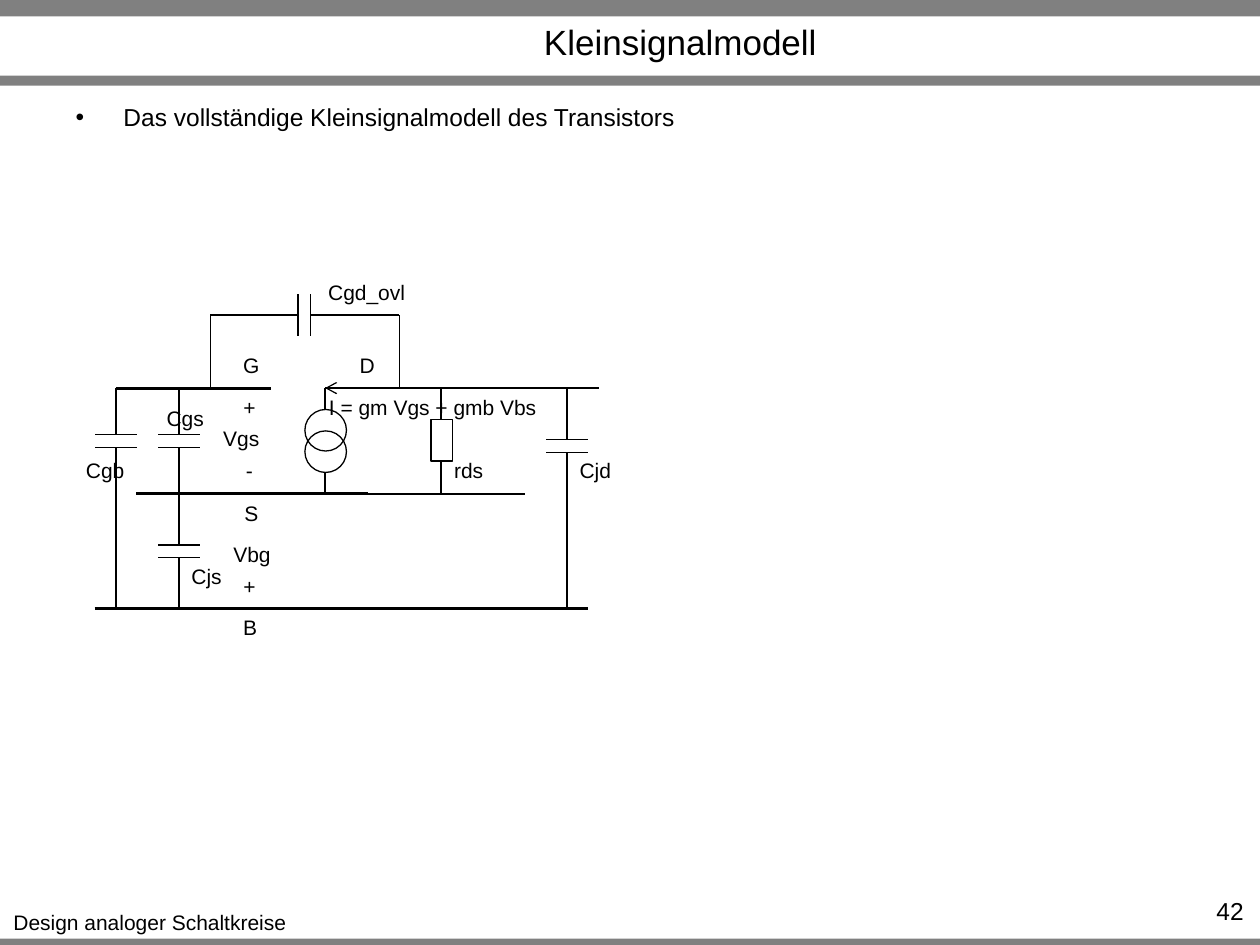
from lxml import etree
from pptx import Presentation
from pptx.dml.color import RGBColor
from pptx.enum.shapes import MSO_CONNECTOR as Connector, MSO_SHAPE as Shape
from pptx.enum.text import MSO_ANCHOR as Anchor, MSO_AUTO_SIZE as AutoSize, PP_ALIGN as Align
from pptx.oxml.ns import qn
from pptx.util import Inches, Pt

COLORS = {"ink": "000000", "bar": "808080"}
FONT = "Arial"
TITLE = "Kleinsignalmodell"
BULLET = "Das vollständige Kleinsignalmodell des Transistors"
FOOTER = "Design analoger Schaltkreise"
PAGE = "42"

BARS = [(7.45, 0.08), (0, 0.13), (0.6, 0.08)]  # top, height

# Circuit levels
FEEDBACK, GATE, SOURCE, BULK = 2.5, 3.08, 3.92, 4.83
THIN, THICK = 0.75, 1.75
PLATE, GAP = 0.33, 0.1

RAILS = [  # x from, x to, y, width
    (0.92, 2.15, GATE, THICK),
    (2.58, 3, GATE, THIN),
    (2.58, 4.17, SOURCE, THIN),
    (1.08, 2.92, SOURCE, THICK),
    (0.75, 4.67, BULK, THICK),
    (3.17, 2.83, FEEDBACK, THIN),
    (2, 1.67, FEEDBACK, THIN),
]
DROPS = [  # x, y from, y to
    (2.58, 3.75, SOURCE), (2.58, GATE, 3.25),
    (3.5, GATE, 3.33), (3.5, 3.67, SOURCE),
    (0.92, SOURCE, BULK), (4.5, 4, BULK),
    (3.17, FEEDBACK, GATE), (1.67, FEEDBACK, GATE),
]
CAPACITORS = [  # x, y from, y to
    (1.42, GATE, SOURCE), (0.92, GATE, SOURCE),
    (4.5, GATE, 4), (1.42, SOURCE, BULK),
]
OUTLINES = [  # current source and resistor
    (Shape.OVAL, 2.42, 3.25, 0.33, 0.33),
    (Shape.OVAL, 2.42, 3.42, 0.33, 0.33),
    (Shape.RECTANGLE, 3.42, 3.33, 0.17, 0.33),
]
LABELS = [  # text, left, top, width
    ("Vgs", 1.67, 3.33, 0.49), ("I = gm Vgs + gmb Vbs", 2.5, 3.08, 1.87),
    ("+", 1.83, 3.08, 0.3), ("-", 1.85, 3.58, 0.26),
    ("G", 1.83, 2.75, 0.33), ("S", 1.84, 3.92, 0.31),
    ("B", 1.83, 4.83, 0.31), ("Vbg", 1.75, 4.25, 0.5),
    ("D", 2.75, 2.75, 0.33), ("+", 1.83, 4.5, 0.3),
    ("rds", 3.5, 3.58, 0.44), ("Cjd", 4.5, 3.58, 0.45),
    ("Cjs", 1.42, 4.42, 0.44), ("Cgs", 1.22, 3.17, 0.5),
    ("Cgb", 0.58, 3.58, 0.51), ("Cgd_ovl", 2.5, 2.17, 0.82),
]


def color(name):
    return RGBColor.from_string(COLORS[name])


def write(shape, text, size, align, wrap=True):
    frame = shape.text_frame
    frame.word_wrap = wrap
    paragraph = frame.paragraphs[0]
    paragraph.alignment = align
    run = paragraph.add_run()
    run.text = text
    run.font.size, run.font.name = Pt(size), FONT
    run.font.color.rgb = color("ink")
    return paragraph


def place(shape, left, top, width, height):
    shape.left, shape.top = Inches(left), Inches(top)
    shape.width, shape.height = Inches(width), Inches(height)


def add_text(shapes, text, box, size, align, wrap=False):
    shape = shapes.add_textbox(*map(Inches, box))
    write(shape, text, size, align, wrap)


def add_line(shapes, x1, y1, x2, y2, width=THIN):
    line = shapes.add_connector(Connector.STRAIGHT, *map(Inches, (x1, y1, x2, y2)))
    line.line.color.rgb = color("ink")
    line.line.width = Pt(width)
    etree.SubElement(line._element.spPr, qn("a:effectLst"))
    return line


def add_capacitor(shapes, x1, y1, x2, y2):
    """Two plates across the middle of a wire, with a lead to each end."""
    group = shapes.add_group_shape().shapes
    x, y = (x1 + x2) / 2, (y1 + y2) / 2
    half, reach = GAP / 2, PLATE / 2
    if x1 == x2:
        add_line(group, x, y1, x, y - half)
        for plate in (y - half, y + half):
            add_line(group, x - reach, plate, x + reach, plate)
        add_line(group, x, y + half, x, y2)
    else:
        add_line(group, x1, y, x - half, y)
        for plate in (x - half, x + half):
            add_line(group, plate, y + reach, plate, y - reach)
        add_line(group, x + half, y, x2, y)


def main():
    presentation = Presentation()
    presentation.slide_width, presentation.slide_height = Inches(10), Inches(7.5)
    slide = presentation.slides.add_slide(presentation.slide_layouts[1])
    shapes = slide.shapes

    # Frame bars and footer
    for top, height in BARS:
        bar = shapes.add_shape(Shape.RECTANGLE, 0, Inches(top), Inches(10), Inches(height))
        bar.shadow.inherit = False
        bar.fill.solid()
        bar.fill.fore_color.rgb = color("bar")
        bar.line.fill.background()
    add_text(shapes, FOOTER, (0, 7.17, 2.38, 0.3), 12, Align.CENTER)
    add_text(shapes, PAGE, (9.1, 7.06, 0.87, 0.24), 14, Align.RIGHT, wrap=True)

    # Title and bullet
    title, body = shapes.title, slide.placeholders[1]
    place(title, 1.3, 0.14, 8.2, 0.38)
    write(title, TITLE, 20, Align.CENTER)
    title.text_frame.vertical_anchor = Anchor.MIDDLE
    place(body, 0.5, 0.76, 9, 0.49)
    paragraph = write(body, BULLET, 14, Align.LEFT)
    paragraph.space_before = Pt(0)
    properties = paragraph._p.get_or_add_pPr()
    properties.set("marL", str(Inches(0.38)))
    properties.set("indent", str(-Inches(0.38)))
    etree.SubElement(properties, qn("a:buChar"), char="•")
    for placeholder in (title, body):
        placeholder.text_frame.auto_size = AutoSize.NONE

    # Wires
    for x1, x2, y, width in RAILS:
        add_line(shapes, x1, y, x2, y, width)
    for x, y1, y2 in DROPS:
        add_line(shapes, x, y1, x, y2)
    arrow = add_line(shapes, 4.75, GATE, 2.58, GATE)
    etree.SubElement(arrow.line._get_or_add_ln(), qn("a:tailEnd"), type="arrow")

    # Components
    for kind, *box in OUTLINES:
        outline = shapes.add_shape(kind, *map(Inches, box))
        outline.shadow.inherit = False
        outline.fill.background()
        outline.line.color.rgb = color("ink")
        outline.line.width = Pt(THIN)
    for x, y1, y2 in CAPACITORS:
        add_capacitor(shapes, x, y1, x, y2)
    add_capacitor(shapes, 2, FEEDBACK, 2.83, FEEDBACK)

    # Labels
    for text, left, top, width in LABELS:
        add_text(shapes, text, (left, top, width, 0.3), 12, Align.CENTER)

    presentation.save("out.pptx")


if __name__ == "__main__":
    main()
